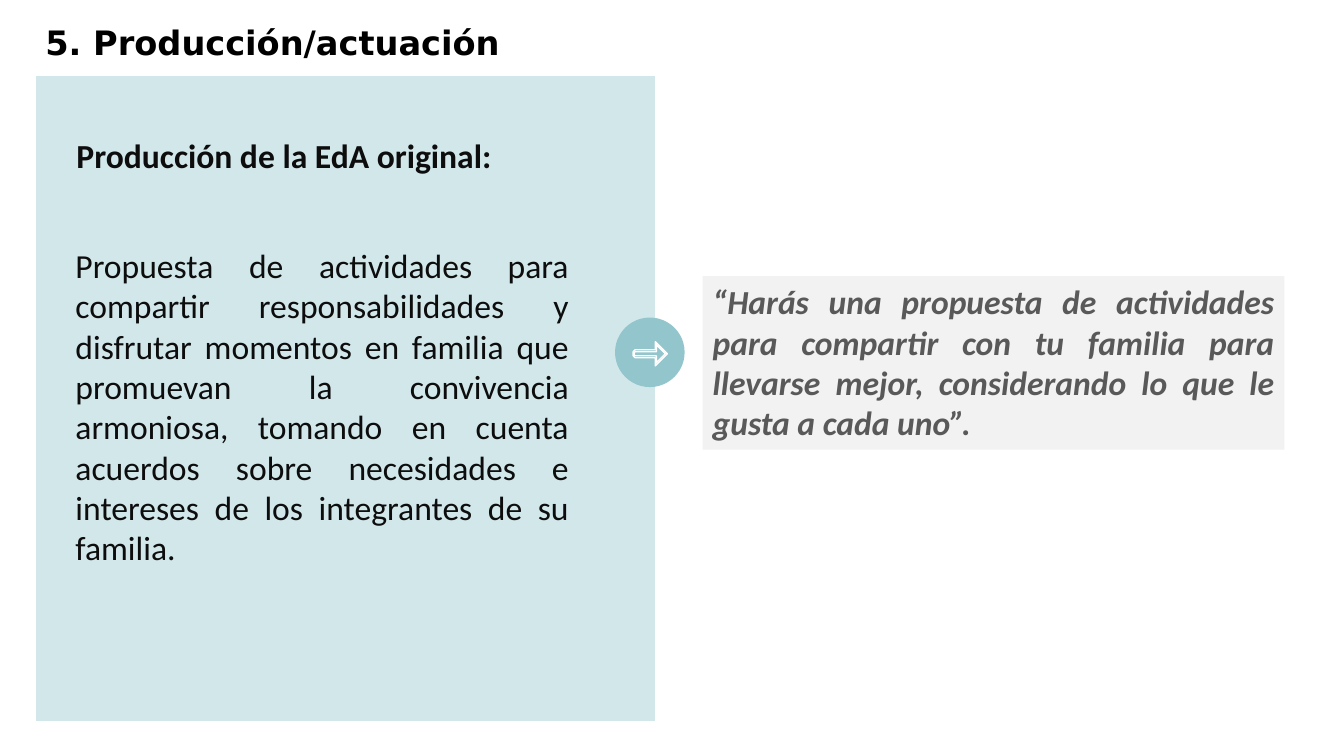
from pptx import Presentation
from pptx.dml.color import RGBColor
from pptx.enum.shapes import MSO_SHAPE as Shape
from pptx.enum.text import MSO_ANCHOR as Anchor, MSO_AUTO_SIZE as AutoSize, PP_ALIGN as Align
from pptx.util import Inches, Pt


def color(value):
    return RGBColor.from_string(value)


class SlideBuilder:
    PANEL, ACCENT, QUOTE = "D2E7EA", "93C5CD", "F2F2F2"
    WHITE, BLACK, INK, GRAY = "FFFFFF", "000000", "0D0D0D", "595959"
    BODY_FONT, TITLE_FONT = "Calibri", "DejaVu Sans"
    SIZE = 24

    def __init__(self, deck):
        self.slide = deck.slides.add_slide(deck.slide_layouts[5])

    def set_text(self, box, text, font=BODY_FONT, ink=INK, bold=False, italic=False,
                 align=Align.LEFT, spacing=1.0, anchor=Anchor.TOP):
        frame = box.text_frame
        frame.word_wrap = True
        frame.auto_size = AutoSize.NONE
        frame.vertical_anchor = anchor
        frame.margin_left = frame.margin_right = Inches(0.1)
        frame.margin_top = frame.margin_bottom = Inches(0.05)
        para = frame.paragraphs[0]
        para.alignment = align
        para.line_spacing = spacing
        span = para.add_run()
        span.text = text
        span.font.name = font
        span.font.size = Pt(self.SIZE)
        span.font.bold = bold
        span.font.italic = italic
        span.font.color.rgb = color(ink)

    def paint(self, shape, fill, line=None):
        shape.shadow.inherit = False
        shape.fill.solid()
        shape.fill.fore_color.rgb = color(fill)
        if line:
            shape.line.color.rgb = color(line)
            shape.line.width = Pt(1)
        else:
            shape.line.fill.background()
        return shape

    def title(self, text, left, top, width, height):
        box = self.slide.shapes.title
        box.left, box.top = Inches(left), Inches(top)
        box.width, box.height = Inches(width), Inches(height)
        self.set_text(box, text, font=self.TITLE_FONT, ink=self.BLACK, bold=True,
                      spacing=0.9, anchor=Anchor.MIDDLE)

    def text(self, text, left, top, width, height, **style):
        box = self.slide.shapes.add_textbox(*map(Inches, (left, top, width, height)))
        self.set_text(box, text, **style)

    def shape(self, kind, left, top, width, height, fill, line=None):
        shape = self.slide.shapes.add_shape(kind, *map(Inches, (left, top, width, height)))
        return self.paint(shape, fill, line)

    def outline(self, contours, fill, line):
        """Draw one freeform from several closed contours given in inches."""
        first, *others = [[(Inches(x), Inches(y)) for x, y in points] for points in contours]
        builder = self.slide.shapes.build_freeform(*first[0])
        builder.add_line_segments(first[1:], close=True)
        for points in others:
            builder.move_to(*points[0])
            builder.add_line_segments(points[1:], close=True)
        return self.paint(builder.convert_to_shape(), fill, line)


def arrow_contour(tail, neck, tip, half_shaft, half_head, middle=3.51, bevel=0.01):
    """Return a right-pointing block arrow with a bevelled tail."""
    upper = [(tail, middle - half_shaft + bevel), (tail + bevel, middle - half_shaft),
             (neck, middle - half_shaft), (neck, middle - half_head)]
    lower = [(x, 2 * middle - y) for x, y in reversed(upper)]
    return upper + [(tip, middle)] + lower


def main():
    deck = Presentation()
    deck.slide_width, deck.slide_height = Inches(13.33), Inches(7.5)
    page = SlideBuilder(deck)

    page.title("5. Producción/actuación", 0.35, 0.23, 5.09, 0.43)
    page.shape(Shape.RECTANGLE, 0.35, 0.75, 6.15, 6.41, page.PANEL, page.WHITE)
    page.text("Propuesta de actividades para compartir responsabilidades y disfrutar "
              "momentos en familia que promuevan la convivencia armoniosa, tomando en "
              "cuenta acuerdos sobre necesidades e intereses de los integrantes de su "
              "familia.", 0.65, 2.38, 5.09, 3.08, align=Align.JUSTIFY)

    page.shape(Shape.OVAL, 6.1, 3.15, 0.69, 0.69, page.ACCENT)
    inner = arrow_contour(6.29, 6.51, 6.6, 0.02, 0.09)
    outer = arrow_contour(6.28, 6.5, 6.62, 0.04, 0.12, bevel=0.02)
    page.outline([inner, outer], page.ACCENT, page.WHITE)

    quote = page.shape(Shape.RECTANGLE, 6.97, 2.74, 5.77, 1.72, page.QUOTE)
    page.set_text(quote, "“Harás una propuesta de actividades para compartir con tu familia "
                  "para llevarse mejor, considerando lo que le gusta a cada uno”.",
                  ink=page.GRAY, bold=True, italic=True, align=Align.JUSTIFY)
    page.text("Producción de la EdA original:", 0.66, 1.33, 5.09, 0.88,
              bold=True, spacing=0.9)

    deck.save("out.pptx")


if __name__ == "__main__":
    main()
